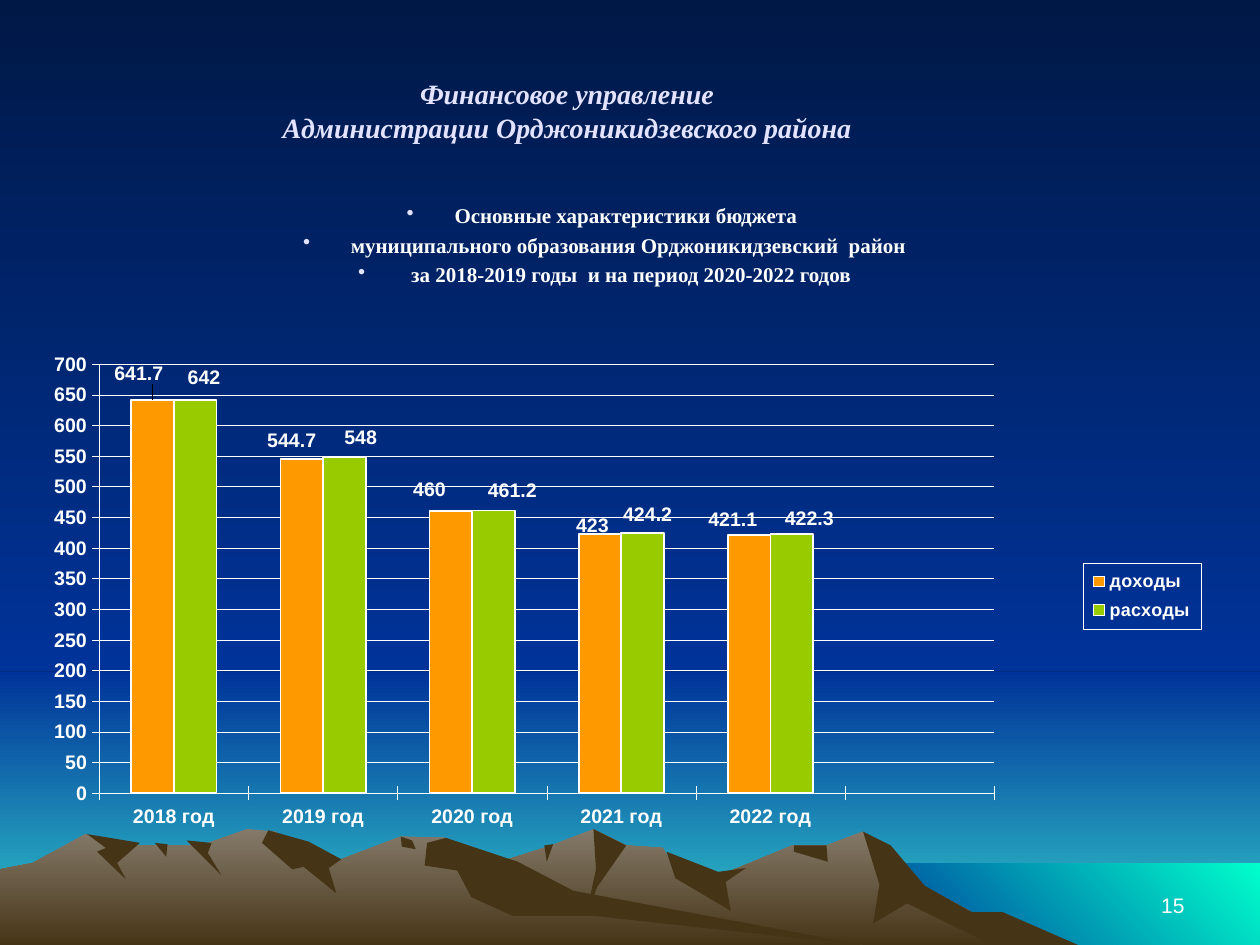
import pptx
import pptx.chart.data
import pptx.dml.color
import pptx.enum.chart
import pptx.enum.shapes
import pptx.enum.text
import pptx.oxml
import pptx.oxml.ns
import pptx.util

Inches, Pt = pptx.util.Inches, pptx.util.Pt
RGBColor = pptx.dml.color.RGBColor
qn = pptx.oxml.ns.qn
ALIGN, ANCHOR = pptx.enum.text.PP_ALIGN, pptx.enum.text.MSO_ANCHOR

WHITE = RGBColor(0xFF, 0xFF, 0xFF)
LAVENDER = RGBColor(0xE3, 0xE3, 0xFF)
NIGHT = RGBColor(0x00, 0x18, 0x46)
BLUE = RGBColor(0x00, 0x33, 0x99)
SEA = RGBColor(0x33, 0xCC, 0xCC)
MINT = RGBColor(0x00, 0xFF, 0xCC)
STONE = RGBColor(0x85, 0x7A, 0x6A)
EARTH = RGBColor(0x46, 0x34, 0x16)
ORANGE = RGBColor(0xFF, 0x99, 0x00)
GREEN = RGBColor(0x99, 0xCC, 0x00)

TITLE = ["Финансовое управление\vАдминистрации Орджоникидзевского района"]
SUBTITLE = [
    "Основные характеристики бюджета ",
    "муниципального образования Орджоникидзевский  район",
    " за 2018-2019 годы  и на период 2020-2022 годов",
]
CATEGORIES = ["2018 год", "2019 год", "2020 год", "2021 год", "2022 год", ""]
# Name, colour, values, label shifts in inches
SERIES = [
    ("доходы", ORANGE, [641.7, 544.7, 460, 423, 421.1, None],
     [(-0.11, -0.08), (-0.08, -0.02), (-0.17, -0.05), (-0.06, 0.06), (-0.13, 0)]),
    ("расходы", GREEN, [642, 548, 461.2, 424.2, 422.3, None],
     [(0.07, -0.05), (0.13, -0.03), (0.15, -0.03), (0.04, -0.02), (0.14, 0)]),
]
CHART_BOX = (0.43, 1.68, 9.15, 5.82)

# Left, top, width, height, gradient colours, angle
BANDS = [
    (0, 5.33, 10, 2.17, (BLUE, SEA), 270),
    (0, 0, 10, 5.33, (NIGHT, BLUE), 270),
    (6.83, 6.85, 3.17, 0.67, (BLUE, MINT), 45),
]

# Ridges and their shaded faces, in hundredths of an inch, from back to front
RIGHT_RIDGE = [(258, 751), (327, 709), (394, 685), (438, 671), (471, 658), (497, 671), (526, 673),
               (536, 690), (566, 697), (629, 671), (656, 671), (685, 660), (723, 698), (821, 751)]
RIGHT_SHADE = [
    [(685, 660), (707, 671), (734, 703), (771, 724), (796, 724), (858, 751), (792, 752),
     (720, 717), (693, 733), (698, 702)],
    [(471, 658), (497, 671), (474, 704), (465, 727), (473, 690)],
    [(529, 676), (570, 692), (592, 689), (576, 700), (580, 723), (536, 697)],
    [(630, 671), (656, 671), (657, 684), (630, 676)],
    [(432, 671), (439, 670), (434, 684)],
]
LEFT_RIDGE = [(0, 751), (0, 690), (26, 685), (68, 662), (94, 671), (160, 671), (196, 658),
              (219, 660), (236, 681), (271, 682), (318, 664), (354, 665), (432, 712), (690, 751)]
LEFT_SHADE = [
    [(213, 659), (245, 668), (271, 682), (261, 689), (267, 709), (241, 688), (232, 690),
     (208, 669)],
    [(339, 669), (354, 665), (411, 684), (455, 707), (690, 751), (472, 727), (407, 727),
     (374, 712), (363, 691), (337, 687)],
    [(318, 664), (327, 667), (330, 674), (319, 672)],
    [(148, 667), (168, 669), (165, 677), (176, 695)],
    [(123, 669), (133, 670), (132, 680)],
    [(69, 662), (111, 669), (93, 685), (100, 698), (77, 676), (84, 673)],
]


def set_gradient(fill, colors, angle=270):
    fill.gradient()
    fill.gradient_angle = angle
    for stop, color in zip(fill.gradient_stops, colors):
        stop.color.rgb = color


def add_outline(slide, points):
    builder = slide.shapes.build_freeform(*points[0], scale=Inches(0.01))
    builder.add_line_segments(points[1:], close=True)
    shape = builder.convert_to_shape()
    shape.shadow.inherit = False
    shape.line.fill.background()
    return shape


def set_font(font, size, color=WHITE, name="Arial", bold=True, italic=False):
    font.size, font.name, font.bold, font.italic = Pt(size), name, bold, italic
    font.color.rgb = color


def add_text(slide, box, lines, anchor, align, **font):
    frame = slide.shapes.add_textbox(*map(Inches, box)).text_frame
    frame.word_wrap, frame.vertical_anchor = True, anchor
    for index, line in enumerate(lines):
        paragraph = frame.add_paragraph() if index else frame.paragraphs[0]
        paragraph.text, paragraph.alignment = line, align
        set_font(paragraph.font, **font)
    return frame


def add_bullet(paragraph):
    paragraph.space_before = Pt(2.4)
    properties = paragraph._p.get_or_add_pPr()
    properties.set("marL", str(Inches(0.38)))
    properties.set("indent", str(-Inches(0.38)))
    color = pptx.oxml.parse_xml(
        f'<a:buClr {pptx.oxml.ns.nsdecls("a")}><a:srgbClr val="{LAVENDER}"/></a:buClr>')
    bullet = pptx.oxml.parse_xml(f'<a:buChar {pptx.oxml.ns.nsdecls("a")} char="•"/>')
    properties.find(qn("a:spcBef")).addnext(color)
    color.addnext(bullet)


def manual_layout(**settings):
    parts = "".join(f'<c:{key} val="{value}"/>' for key, value in settings.items())
    return pptx.oxml.parse_xml(f'<c:layout {pptx.oxml.ns.nsdecls("c")}>'
                               f'<c:manualLayout>{parts}</c:manualLayout></c:layout>')


def drop_layout(element):
    for layout in element.findall(qn("c:layout")):
        element.remove(layout)


def add_budget_chart(slide):
    enums = pptx.enum.chart
    data = pptx.chart.data.CategoryChartData()
    data.categories = CATEGORIES
    for name, _, values, _ in SERIES:
        data.add_series(name, values)
    chart = slide.shapes.add_chart(enums.XL_CHART_TYPE.COLUMN_CLUSTERED,
                                   *map(Inches, CHART_BOX), data).chart
    chart.has_title = False
    set_font(chart.font, 11.2)

    # Axes
    for axis in (chart.category_axis, chart.value_axis):
        axis.major_tick_mark = enums.XL_TICK_MARK.CROSS
        axis.minor_tick_mark = enums.XL_TICK_MARK.NONE
        axis.format.line.color.rgb, axis.format.line.width = WHITE, Pt(0.25)
        set_font(axis.tick_labels.font, 11.2)
    chart.category_axis.tick_label_position = enums.XL_TICK_LABEL_POSITION.LOW
    value_axis = chart.value_axis
    value_axis.minimum_scale, value_axis.maximum_scale, value_axis.major_unit = 0, 700, 50
    grid = value_axis.major_gridlines.format.line
    grid.color.rgb, grid.width = WHITE, Pt(0.25)

    # Columns and their shifted labels
    plot = chart.plots[0]
    plot.gap_width, plot.overlap, plot.vary_by_categories = 150, 0, False
    for series, (_, color, _, shifts) in zip(plot.series, SERIES):
        series.format.fill.solid()
        series.format.fill.fore_color.rgb = color
        series.format.line.color.rgb, series.format.line.width = WHITE, Pt(1)
        for index in range(len(shifts)):
            label = series.points[index].data_label
            label.position = enums.XL_LABEL_POSITION.OUTSIDE_END
            set_font(label.font, 11.2)
        for label, (x, y) in zip(series._element.iter(qn("c:dLbl")), shifts):
            label.find(qn("c:idx")).addnext(
                manual_layout(x=round(x / CHART_BOX[2], 4), y=round(y / CHART_BOX[3], 4)))

    # Plot area and legend places
    plot_area = chart._chartSpace.chart.plotArea
    drop_layout(plot_area)
    plot_area.insert(0, manual_layout(layoutTarget="inner", xMode="edge", yMode="edge",
                                      x=0.037, y=0.208, w=0.778, h=0.585))
    chart.has_legend = True
    legend = chart.legend
    legend.position, legend.include_in_layout = enums.XL_LEGEND_POSITION.RIGHT, False
    set_font(legend.font, 10.3)
    element = legend._element
    drop_layout(element)
    element.find(qn("c:legendPos")).addnext(
        manual_layout(xMode="edge", yMode="edge", x=0.892, y=0.479, w=0.103, h=0.09))
    element.find(qn("c:overlay")).addnext(pptx.oxml.parse_xml(
        f'<c:spPr {pptx.oxml.ns.nsdecls("c", "a")}><a:noFill/><a:ln w="3175"><a:solidFill>'
        f'<a:srgbClr val="{WHITE}"/></a:solidFill></a:ln></c:spPr>'))


def main():
    presentation = pptx.Presentation()
    presentation.slide_width, presentation.slide_height = Inches(10), Inches(7.5)
    slide = presentation.slides.add_slide(presentation.slide_layouts[6])
    set_gradient(slide.background.fill, (NIGHT, BLUE))

    # Sky and water
    for *box, colors, angle in BANDS:
        band = slide.shapes.add_shape(pptx.enum.shapes.MSO_SHAPE.RECTANGLE, *map(Inches, box))
        band.shadow.inherit = False
        band.line.fill.background()
        set_gradient(band.fill, colors, angle)

    # Mountains
    for ridge, faces in ((RIGHT_RIDGE, RIGHT_SHADE), (LEFT_RIDGE, LEFT_SHADE)):
        set_gradient(add_outline(slide, ridge).fill, (STONE, EARTH))
        for face in faces:
            shade = add_outline(slide, face)
            shade.fill.solid()
            shade.fill.fore_color.rgb = EARTH

    # Page number, chart and headings
    add_text(slide, (7.17, 6.83, 2.33, 0.5), ["15"], ANCHOR.BOTTOM, ALIGN.RIGHT,
             size=12, bold=False)
    add_budget_chart(slide)
    add_text(slide, (0, 0.25, 9, 1.25), TITLE, ANCHOR.MIDDLE, ALIGN.CENTER,
             size=16, color=LAVENDER, name="Times New Roman", italic=True)
    subtitle = add_text(slide, (0.28, 1.61, 9.04, 0.05), SUBTITLE, ANCHOR.TOP, ALIGN.CENTER,
                        size=12, name="Times New Roman")
    for paragraph in subtitle.paragraphs:
        add_bullet(paragraph)
    presentation.save("out.pptx")


if __name__ == "__main__":
    main()
